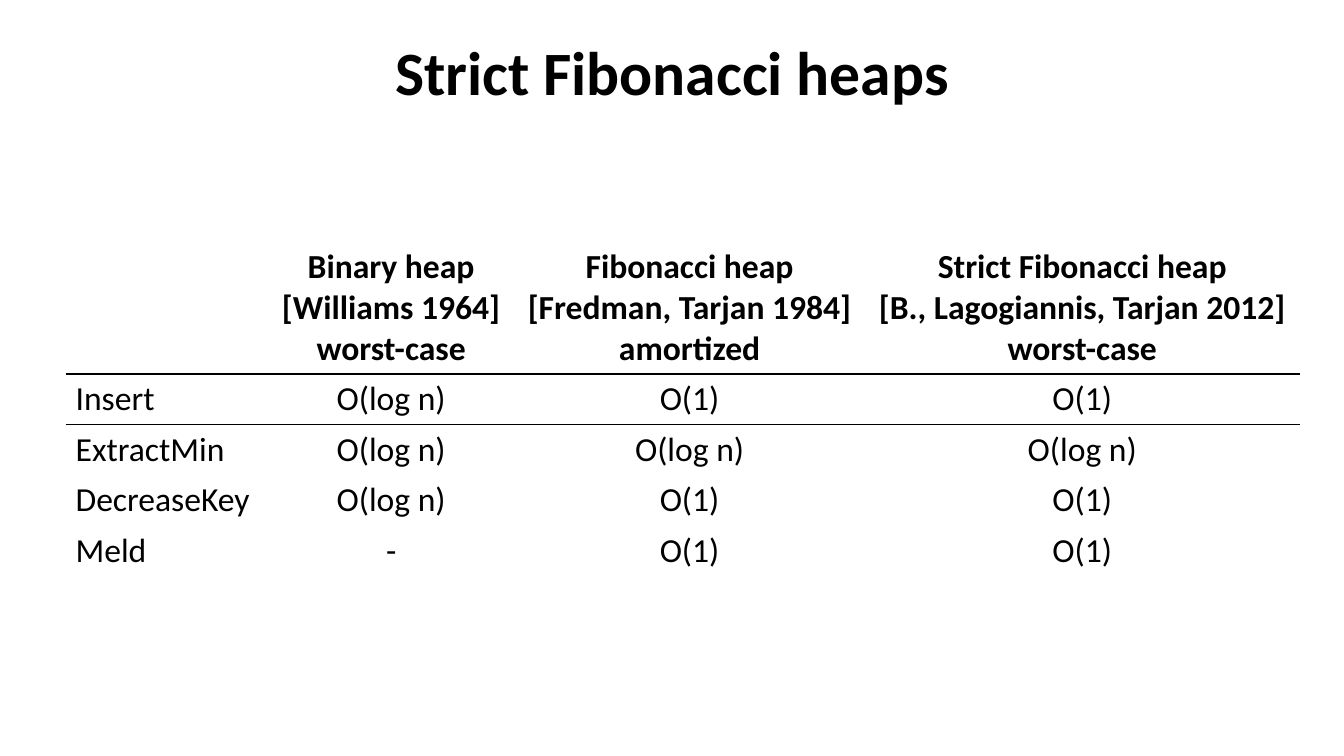
from lxml.etree import SubElement
from pptx import Presentation
from pptx.dml.color import RGBColor
from pptx.enum.text import MSO_ANCHOR, PP_ALIGN
from pptx.oxml.ns import qn
from pptx.util import Inches, Pt

COLORS = {"text": "000000", "rule": "000000"}
COLUMN_WIDTHS = [2.01, 2.44, 3.48, 4.31]
HEADER_HEIGHT, ROW_HEIGHT = 1.31, 0.5
RULED_ROWS = {0, 1}  # rows with a line below
ROWS = [
    ["", "Binary heap\n[Williams 1964]\nworst-case",
     "Fibonacci heap\n[Fredman, Tarjan 1984]\namortized",
     "Strict Fibonacci heap\n[B., Lagogiannis, Tarjan 2012]\nworst-case"],
    ["Insert", "O(log n)", "O(1)", "O(1)"],
    ["ExtractMin", "O(log n)", "O(log n)", "O(log n)"],
    ["DecreaseKey", "O(log n)", "O(1)", "O(1)"],
    ["Meld", "-", "O(1)", "O(1)"],
]


class SlideBuilder:
    font_name = "Calibri"

    def __init__(self, page):
        self.page = page

    def style(self, para, size, bold, align):
        para.alignment = align
        para.font.name = self.font_name
        para.font.size = Pt(size)
        para.font.bold = bold
        para.font.color.rgb = RGBColor.from_string(COLORS["text"])

    def title(self, text, left, top, width, height):
        box = self.page.shapes.add_textbox(
            Inches(left), Inches(top), Inches(width), Inches(height))
        frame = box.text_frame
        frame.word_wrap = True
        frame.vertical_anchor = MSO_ANCHOR.MIDDLE
        para = frame.paragraphs[0]
        para.text = text
        para.line_spacing = 0.9
        self.style(para, 44, True, PP_ALIGN.CENTER)

    def borders(self, cell, ruled_sides):
        properties = cell._tc.get_or_add_tcPr()
        for side in "LRTB":
            line = SubElement(properties, qn(f"a:ln{side}"), w=str(Pt(1)))
            if side in ruled_sides:
                fill = SubElement(line, qn("a:solidFill"))
                SubElement(fill, qn("a:srgbClr"), val=COLORS["rule"])
            else:
                SubElement(line, qn("a:noFill"))

    def table(self, rows, left, top):
        height = HEADER_HEIGHT + ROW_HEIGHT * (len(rows) - 1)
        table = self.page.shapes.add_table(
            len(rows), len(COLUMN_WIDTHS), Inches(left), Inches(top),
            Inches(sum(COLUMN_WIDTHS)), Inches(height)).table
        table.first_row = table.horz_banding = False
        for column, width in zip(table.columns, COLUMN_WIDTHS):
            column.width = Inches(width)
        for r, texts in enumerate(rows):
            table.rows[r].height = Inches(ROW_HEIGHT if r else HEADER_HEIGHT)
            sides = ("T" if r - 1 in RULED_ROWS else "") + ("B" if r in RULED_ROWS else "")
            for c, text in enumerate(texts):
                cell = table.cell(r, c)
                cell.text = text
                self.borders(cell, sides)
                cell.fill.background()
                for para in cell.text_frame.paragraphs:
                    self.style(para, 24, r == 0, PP_ALIGN.CENTER if c else PP_ALIGN.LEFT)


def main():
    deck = Presentation()
    deck.slide_width, deck.slide_height = Inches(13.33), Inches(7.5)
    builder = SlideBuilder(deck.slides.add_slide(deck.slide_layouts[6]))
    # Heading
    builder.title("Strict Fibonacci heaps", 0.92, 0.02, 11.5, 1.45)
    # Running times of the heap operations
    builder.table(ROWS, 0.65, 2.4)
    deck.save("out.pptx")


if __name__ == "__main__":
    main()
